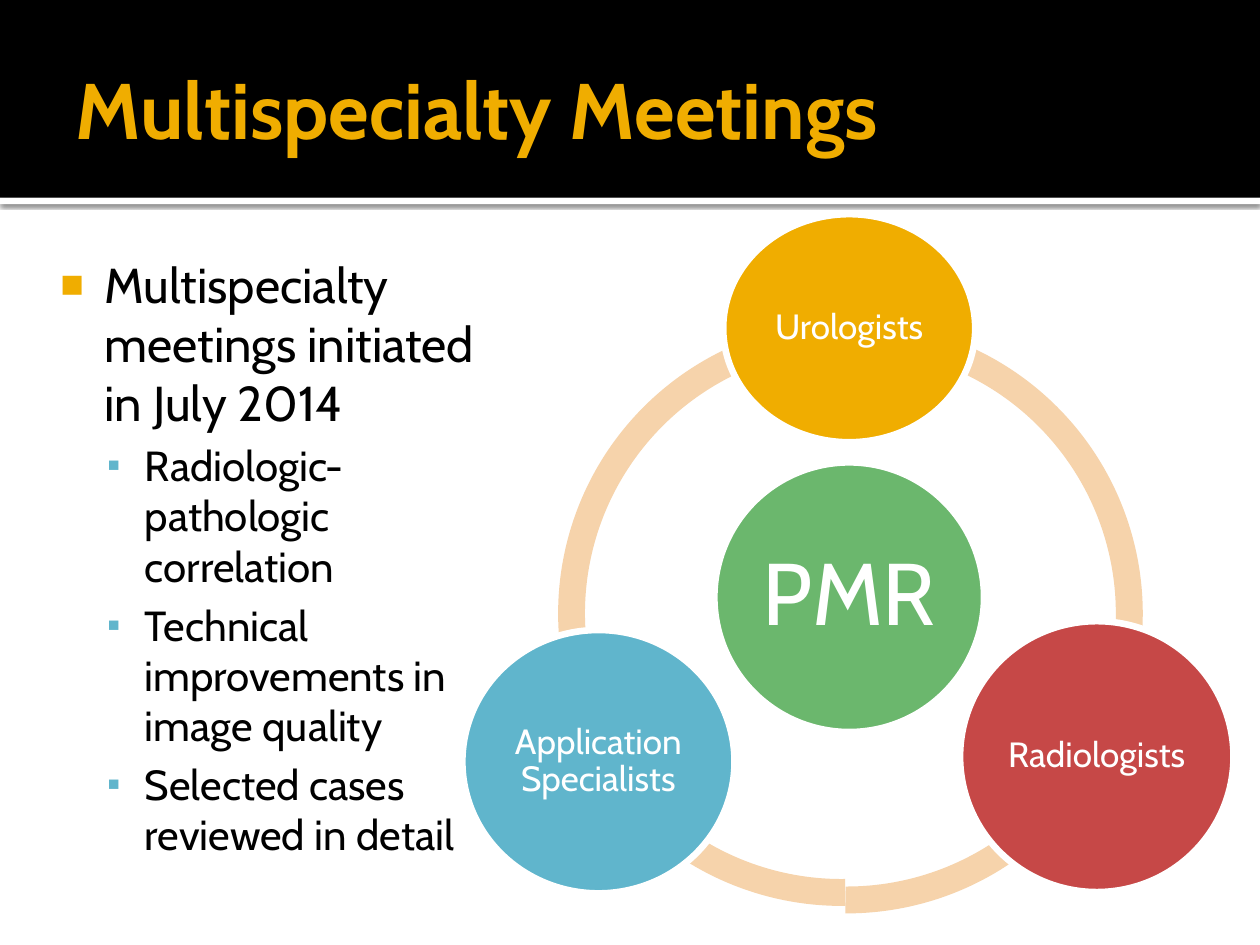
import pptx
import pptx.dml.color
import pptx.enum.shapes
import pptx.enum.text
import pptx.oxml
import pptx.oxml.ns
import pptx.util

Pt = pptx.util.Pt
RGBColor = pptx.dml.color.RGBColor
SHAPE = pptx.enum.shapes.MSO_SHAPE
ALIGN = pptx.enum.text.PP_ALIGN
ANCHOR = pptx.enum.text.MSO_ANCHOR
AUTO_SIZE = pptx.enum.text.MSO_AUTO_SIZE

BLACK = RGBColor(0x00, 0x00, 0x00)
WHITE = RGBColor(0xFF, 0xFF, 0xFF)
GOLD = RGBColor(0xF0, 0xAD, 0x00)
BLUE = RGBColor(0x60, 0xB5, 0xCC)
GREEN = RGBColor(0x6B, 0xB7, 0x6D)
RED = RGBColor(0xC6, 0x48, 0x47)
PEACH = RGBColor(0xF6, 0xD3, 0xAB)
FONT = "Cabin"

TITLE = "Multispecialty Meetings"
# level, text
BULLETS = [
    (0, "Multispecialty meetings initiated in July 2014"),
    (1, "Radiologic- pathologic correlation"),
    (1, "Technical improvements in image quality"),
    (1, "Selected cases reviewed in detail"),
]
LEVELS = [
    dict(size=28, before=0, left=34.56, indent=-25.2, mark="■", color=GOLD, scale=80),
    dict(size=24, before=4.8, left=57.6, indent=-21.6, mark="▪", color=BLUE, scale=90),
]
# left, top, width, height, colour
BANDS = [
    (0, 113.04, 720, 3.6, WHITE),
    (0, 0, 720, 113.04, BLACK),
]
# left, top, start angle, end angle
ARCS = [
    (313.92, 183.6, 89.25, 162.96),
    (316.8, 187.92, 17.05, 90.23),
    (318.96, 183.6, 162, 18),
]
ARC_SIZE, ARC_THICKNESS = 334.08, 0.046
DEGREE = 0.6  # adjustment units in one degree
# text, left, top, width, height, colour, text size, inset
CIRCLES = [
    ("PMR", 408.24, 264.24, 154.08, 154.08, GREEN, 50, 5),
    ("Urologists", 413.28, 122.4, 144, 130.32, GOLD, 20, 2),
    ("Radiologists", 548.64, 354.96, 156.24, 154.8, RED, 20, 2),
    ("Application Specialists", 264.24, 360, 155.52, 150.48, BLUE, 20, 2),
]


def set_all(target, **values):
    for name, value in values.items():
        setattr(target, name, value)


def place(shape, left, top, width, height):
    set_all(shape, left=Pt(left), top=Pt(top), width=Pt(width), height=Pt(height))


def set_frame(frame, insets, anchor):
    sides = ("margin_left", "margin_top", "margin_right", "margin_bottom")
    set_all(frame, word_wrap=True, auto_size=AUTO_SIZE.NONE, vertical_anchor=anchor,
            **{side: Pt(inset) for side, inset in zip(sides, insets)})


def write(para, text, size, color, bold=False):
    span = para.add_run()
    span.text = text
    set_all(span.font, name=FONT, size=Pt(size), bold=bold)
    span.font.color.rgb = color


def add_filled(shapes, kind, left, top, width, height, color):
    shape = shapes.add_shape(kind, Pt(left), Pt(top), Pt(width), Pt(height))
    shape.fill.solid()
    shape.fill.fore_color.rgb = color
    shape.line.fill.background()
    shape.shadow.inherit = False
    return shape


def add_shadow(shape):
    effects = shape.element.spPr.find(pptx.oxml.ns.qn("a:effectLst"))
    effects.append(pptx.oxml.parse_xml(
        f'<a:outerShdw {pptx.oxml.ns.nsdecls("a")} blurRad="{Pt(2.5)}" '
        f'dist="{Pt(0.8)}" dir="5400000" algn="t" rotWithShape="0">'
        '<a:srgbClr val="000000"><a:alpha val="60000"/></a:srgbClr></a:outerShdw>'))


def set_bullet(para, style):
    properties = para._p.get_or_add_pPr()
    properties.set("marL", str(Pt(style["left"])))
    properties.set("indent", str(Pt(style["indent"])))
    namespace = pptx.oxml.ns.nsdecls("a")
    for xml in (
        f'<a:buClr {namespace}><a:srgbClr val="{style["color"]}"/></a:buClr>',
        f'<a:buSzPct {namespace} val="{style["scale"] * 1000}"/>',
        f'<a:buChar {namespace} char="{style["mark"]}"/>',
    ):
        properties.append(pptx.oxml.parse_xml(xml))


def add_header(page):
    title = page.shapes.title
    place(title, 36, 12.24, 648, 98.64)
    set_frame(title.text_frame, (7.2, 3.6, 3.6, 3.6), ANCHOR.MIDDLE)
    para = title.text_frame.paragraphs[0]
    para.alignment = ALIGN.LEFT
    write(para, TITLE, 45, GOLD, bold=True)
    bands = [add_filled(page.shapes, SHAPE.RECTANGLE, *band) for band in BANDS]
    add_shadow(bands[0])
    for band in bands:
        title.element.addprevious(band.element)


def add_bullets(page):
    body = page.placeholders[1]
    place(body, 18, 138.24, 264.24, 383.76)
    frame = body.text_frame
    set_frame(frame, (7.2, 7.2, 7.2, 3.6), ANCHOR.TOP)
    for number, (level, text) in enumerate(BULLETS):
        para = frame.add_paragraph() if number else frame.paragraphs[0]
        style = LEVELS[level]
        set_all(para, level=level, alignment=ALIGN.LEFT, space_before=Pt(style["before"]))
        set_bullet(para, style)
        write(para, text, style["size"], BLACK)


def add_cycle(page):
    shapes = page.shapes.add_group_shape().shapes
    for left, top, start, end in ARCS:
        arc = add_filled(shapes, SHAPE.BLOCK_ARC, left, top, ARC_SIZE, ARC_SIZE, PEACH)
        for number, value in enumerate((start * DEGREE, end * DEGREE, ARC_THICKNESS)):
            arc.adjustments[number] = value
    for text, left, top, width, height, color, size, inset in CIRCLES:
        circle = add_filled(shapes, SHAPE.OVAL, left, top, width, height, color)
        circle.line.color.rgb = WHITE
        circle.line.width = Pt(3.78)
        set_frame(circle.text_frame, [inset] * 4, ANCHOR.MIDDLE)
        para = circle.text_frame.paragraphs[0]
        set_all(para, alignment=ALIGN.CENTER, line_spacing=0.9)
        write(para, text, size, WHITE)


def main():
    deck = pptx.Presentation()
    set_all(deck, slide_width=Pt(720), slide_height=Pt(540))
    page = deck.slides.add_slide(deck.slide_layouts[1])
    add_header(page)
    add_bullets(page)
    add_cycle(page)
    deck.save("out.pptx")


if __name__ == "__main__":
    main()
